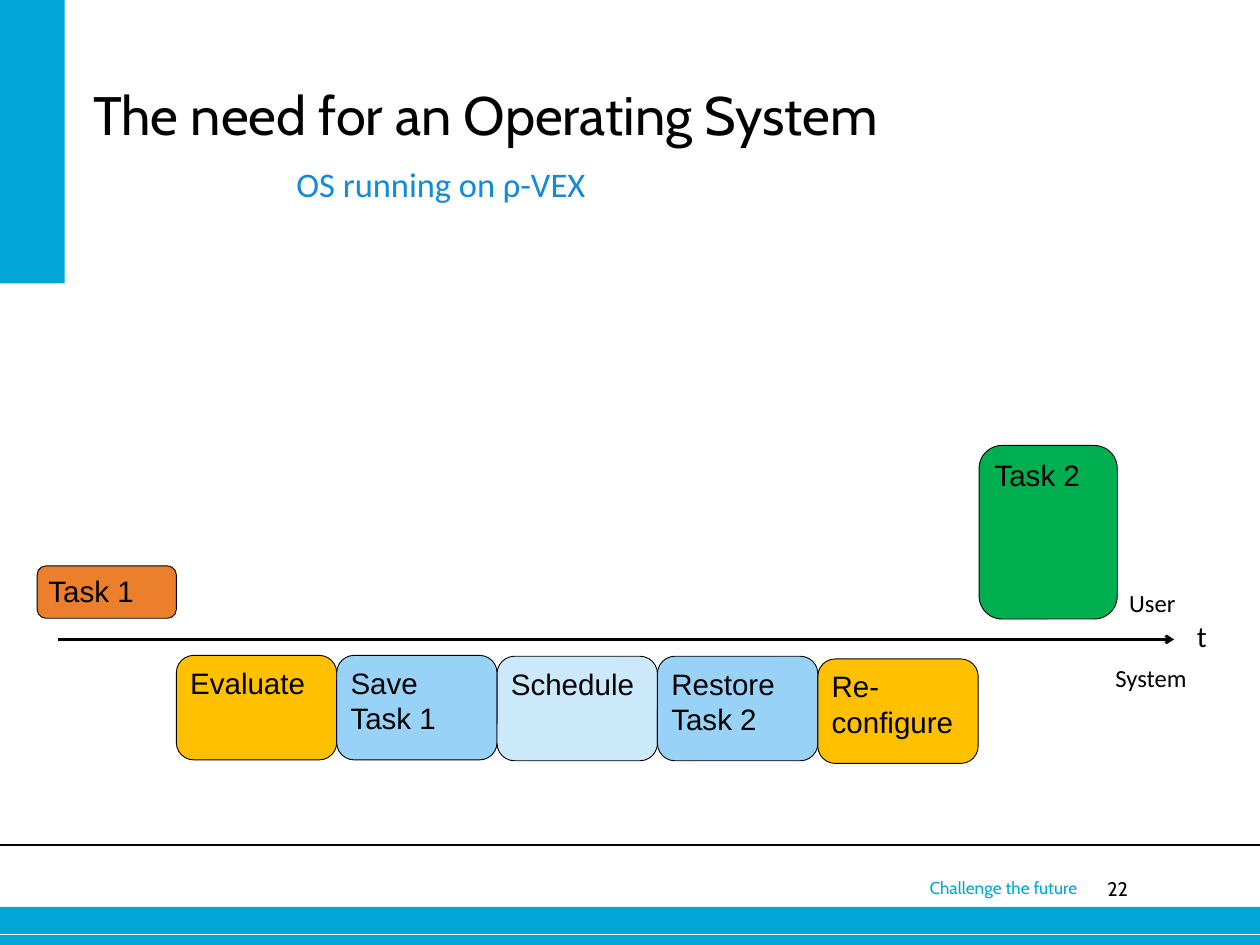
from pptx import Presentation
from pptx.dml.color import RGBColor
from pptx.enum.shapes import MSO_CONNECTOR, MSO_SHAPE
from pptx.enum.text import MSO_ANCHOR, PP_ALIGN
from pptx.oxml.ns import qn
from pptx.util import Inches, Pt
from lxml.etree import SubElement

BLACK = RGBColor(0x00, 0x00, 0x00)
WHITE = RGBColor(0xFF, 0xFF, 0xFF)
CYAN = RGBColor(0x00, 0xA6, 0xD6)
BLUE = RGBColor(0x10, 0x8B, 0xD9)
ORANGE = RGBColor(0xEC, 0x7F, 0x2C)
GREEN = RGBColor(0x00, 0xB0, 0x50)
AMBER = RGBColor(0xFF, 0xC0, 0x00)
SKY = RGBColor(0x98, 0xD2, 0xF7)
PALE_SKY = RGBColor(0xCB, 0xE9, 0xFB)

WIDTH, HEIGHT = 14.22, 10.67
STEP_LEFT, STEP_WIDTH, STEP_HEIGHT = 1.99, 1.81, 1.18

deck = Presentation()
deck.slide_width, deck.slide_height = Inches(WIDTH), Inches(HEIGHT)
slide = deck.slides.add_slide(deck.slide_layouts[6])
shapes = slide.shapes


def write(frame, text, size, font="Calibri", color=BLACK, align=PP_ALIGN.LEFT,
          wrap=True, inset=(0.1, 0.05)):
    frame.text = text
    frame.word_wrap = wrap
    frame.vertical_anchor = MSO_ANCHOR.TOP
    frame.margin_left = frame.margin_right = Inches(inset[0])
    frame.margin_top = frame.margin_bottom = Inches(inset[1])
    for paragraph in frame.paragraphs:
        paragraph.alignment = align
        paragraph.font.size = Pt(size)
        paragraph.font.name = font
        paragraph.font.color.rgb = color


def draw_line(x1, x2, y, color, weight):
    line = shapes.add_connector(MSO_CONNECTOR.STRAIGHT, Inches(x1), Inches(y),
                                Inches(x2), Inches(y))
    line.line.color.rgb = color
    line.line.width = Pt(weight)
    SubElement(line._element.spPr, qn("a:effectLst"))
    return line


for left, top, width, height in [(0, 10.24, WIDTH, 0.43), (0, 0, 0.73, 3.2)]:
    band = shapes.add_shape(MSO_SHAPE.RECTANGLE, Inches(left), Inches(top),
                            Inches(width), Inches(height))
    band.shadow.inherit = False
    band.fill.solid()
    band.fill.fore_color.rgb = CYAN
    band.line.fill.background()

draw_line(0, WIDTH, 10.55, WHITE, 0.75)
draw_line(0, WIDTH, 9.54, BLACK, 1)

time_axis = draw_line(0.65, 13.25, 7.22, BLACK, 2.25)
SubElement(time_axis.line._get_or_add_ln(), qn("a:tailEnd"), type="arrow")

tasks = [
    ("Task 1", 0.42, 6.39, 1.57, 0.59, ORANGE),
    ("Task 2", 11.05, 5.03, 1.56, 1.96, GREEN),
]
steps = [
    ("Evaluate", 7.4, AMBER),
    ("Save\nTask 1", 7.4, SKY),
    ("Schedule", 7.41, PALE_SKY),
    ("Restore\nTask 2", 7.41, SKY),
    ("Re-configure", 7.44, AMBER),
]
for index, (label, top, color) in enumerate(steps):
    tasks.append((label, STEP_LEFT + index * STEP_WIDTH, top,
                  STEP_WIDTH, STEP_HEIGHT, color))

for label, left, top, width, height, color in tasks:
    block = shapes.add_shape(MSO_SHAPE.ROUNDED_RECTANGLE, Inches(left), Inches(top),
                             Inches(width), Inches(height))
    block.shadow.inherit = False
    block.fill.solid()
    block.fill.fore_color.rgb = color
    block.line.color.rgb = BLACK
    block.line.width = Pt(0.75)
    write(block.text_frame, label, 24, font="Arial")

centred = dict(align=PP_ALIGN.CENTER, wrap=False)
captions = [
    ("The need for an Operating System", 1.05, 0.92, 12.09, 2.29,
     dict(size=44, font="Cabin", inset=(0, 0))),
    ("OS running on ρ-VEX", 2.98, 1.79, 3.99, 0.57, dict(size=28, color=BLUE, **centred)),
    ("t", 13.41, 6.93, 0.29, 0.5, dict(size=24, **centred)),
    ("User", 12.61, 6.59, 0.79, 0.44, dict(size=20, **centred)),
    ("System", 12.42, 7.44, 1.14, 0.44, dict(size=20, **centred)),
    ("Challenge the future", 10.35, 9.84, 2.28, 0.38,
     dict(size=14, font="Cabin", color=CYAN, inset=(0.14, 0.07))),
    ("22", 12.03, 9.9, 0.7, 0.39,
     dict(size=16, font="Cabin", align=PP_ALIGN.RIGHT, inset=(0, 0))),
]
for text, left, top, width, height, style in captions:
    caption = shapes.add_textbox(Inches(left), Inches(top), Inches(width), Inches(height))
    write(caption.text_frame, text, **style)

deck.save("out.pptx")
